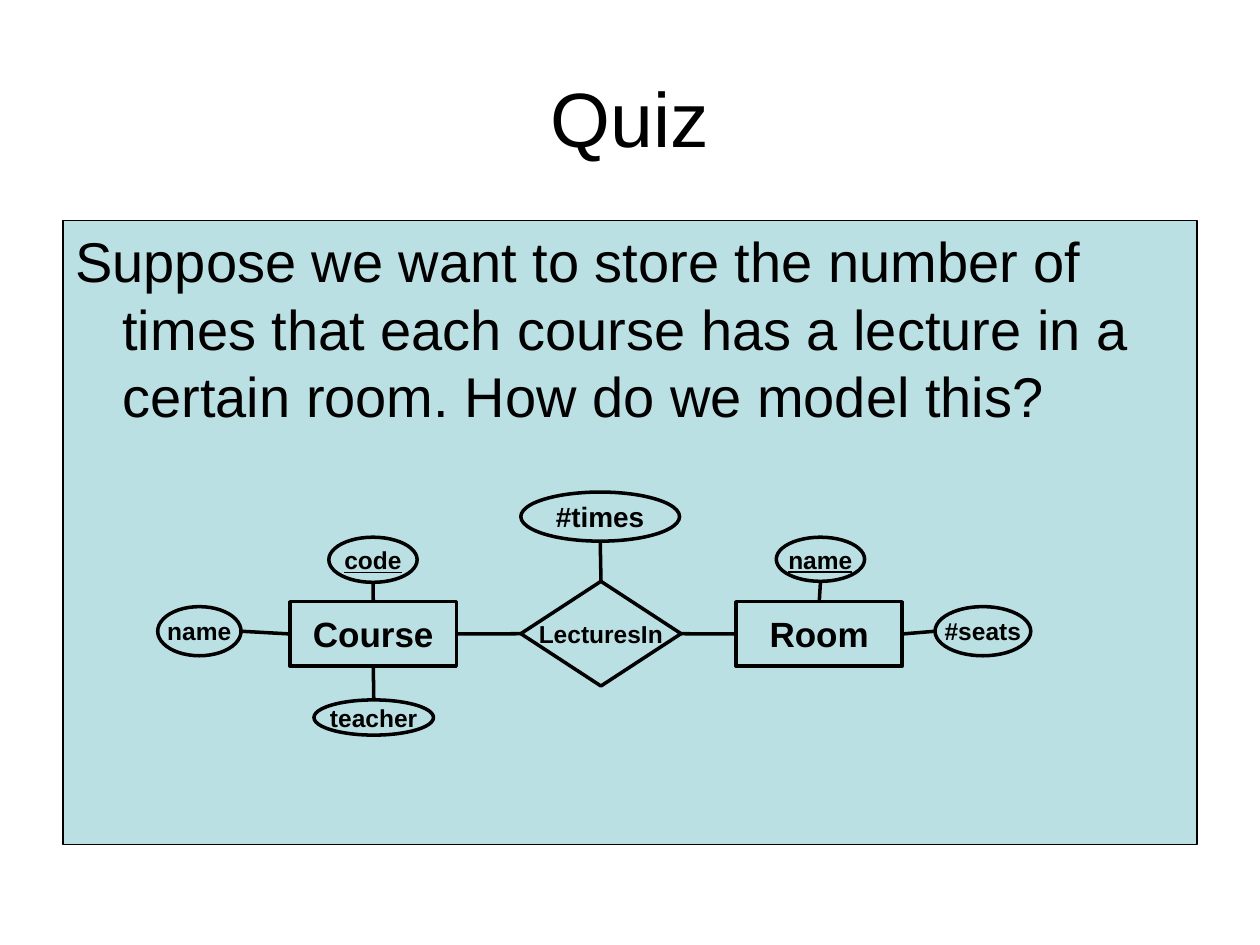
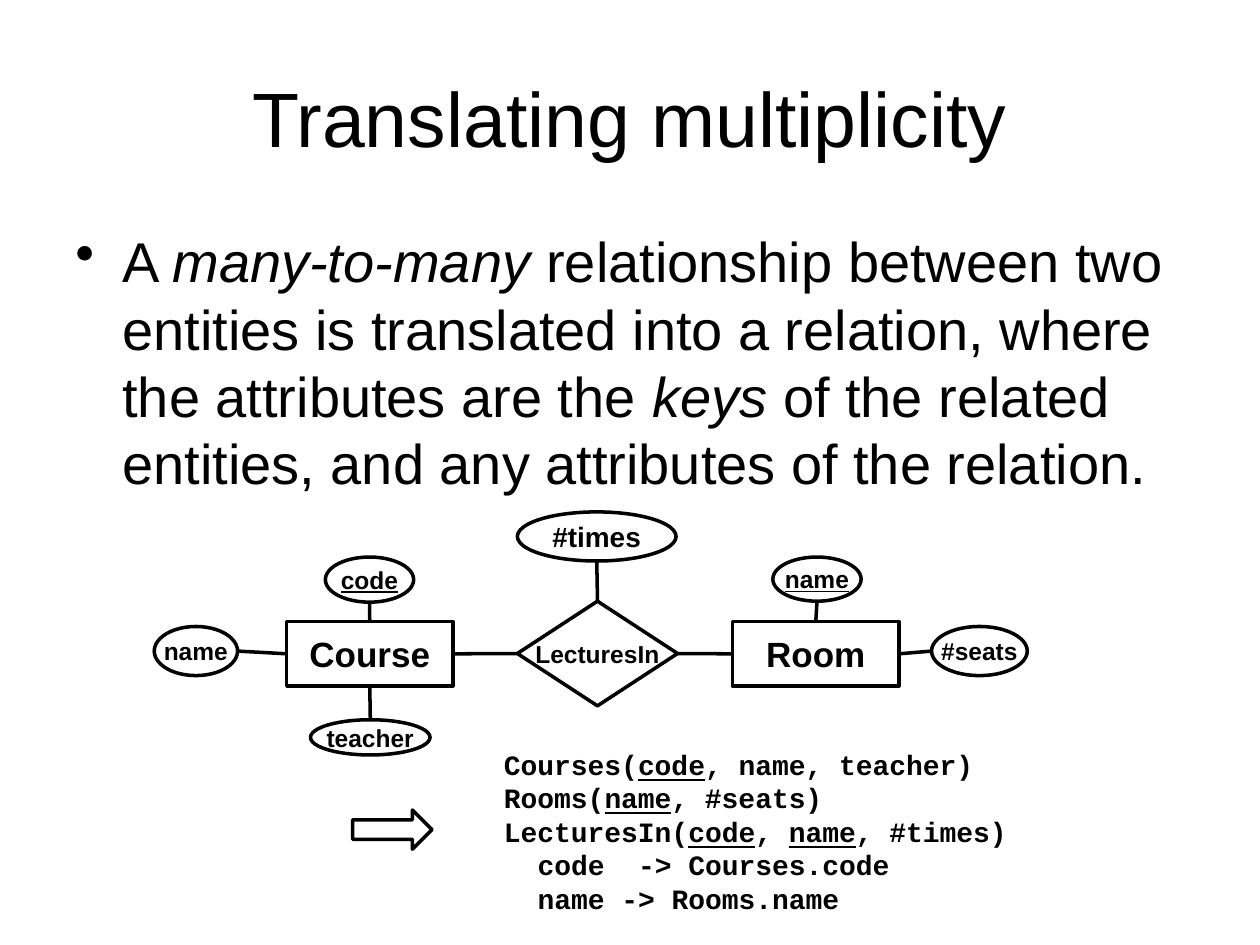
from lxml import etree
from pptx import Presentation
from pptx import util as u
from pptx.dml.color import RGBColor
from pptx.enum import shapes, text
from pptx.oxml import ns

COLORS = {"ink": "000000", "panel": "BBE0E3"}
SHAPE = shapes.MSO_SHAPE
ALIGN = text.PP_ALIGN
ANCHOR = text.MSO_ANCHOR
TOP, LEFT, BOTTOM, RIGHT = range(4)


def rgb(name):
    return RGBColor.from_string(COLORS[name])


def write(p, content, size=32, font="Arial", bold=False, align=ALIGN.LEFT,
          mark="italic", before=0, margin=0, hanging=0, bullet=None):
    """Fill a paragraph; parts between | signs get the mark format."""
    p.alignment = align
    for i, part in enumerate(content.split("|")):
        if not part:
            continue
        r = p.add_run()
        r.text = part
        f = r.font
        f.size, f.name, f.bold = u.Pt(size), font, bold
        f.color.rgb = rgb("ink")
        if i % 2:
            setattr(f, mark, True)
    pPr = p._p.get_or_add_pPr()
    pPr.set("marL", str(u.Cm(margin)))
    pPr.set("indent", str(u.Cm(-hanging)))
    if before:
        spacing = etree.SubElement(pPr, ns.qn("a:spcBef"))
        etree.SubElement(spacing, ns.qn("a:spcPct"), val=str(before * 1000))
    if bullet:
        etree.SubElement(pPr, ns.qn("a:buChar"), char=bullet)


class Deck:
    """Holds the style and the current slide."""

    line_width = u.Pt(2)
    body_format = dict(before=20, margin=0.95, hanging=0.95)

    def __init__(self):
        self.prs = Presentation()
        self.prs.slide_width, self.prs.slide_height = u.Cm(25.4), u.Cm(19.05)

    def slide(self, title):
        self.s = self.prs.slides.add_slide(self.prs.slide_layouts[6])
        self.shapes = self.s.shapes
        tf = self.textbox(1.27, 0.76, 22.86, 3.18)
        tf.vertical_anchor = ANCHOR.MIDDLE
        write(tf.paragraphs[0], title, size=44, align=ALIGN.CENTER)

    def group(self):
        self.shapes = self.s.shapes.add_group_shape().shapes

    def textbox(self, *box):
        tf = self.shapes.add_textbox(*map(u.Cm, box)).text_frame
        tf.word_wrap = True
        return tf

    def shape(self, kind, *box, fill=None, width=line_width):
        sp = self.shapes.add_shape(kind, *map(u.Cm, box))
        sp.shadow.inherit = False
        if fill:
            sp.fill.solid()
            sp.fill.fore_color.rgb = rgb(fill)
        else:
            sp.fill.background()
        sp.line.color.rgb = rgb("ink")
        sp.line.width = width
        return sp

    def node(self, kind, label, *box, size=14):
        sp = self.shape(kind, *box)
        tf = sp.text_frame
        tf.word_wrap = False
        tf.vertical_anchor = ANCHOR.MIDDLE
        write(tf.paragraphs[0], label, size=size, bold=True,
              align=ALIGN.CENTER, mark="underline")
        return sp

    def link(self, start, start_side, end, end_side):
        """Join the middles of two sides."""
        points = []
        for sp, side in ((start, start_side), (end, end_side)):
            across, down = {TOP: (1, 0), LEFT: (0, 1),
                            BOTTOM: (1, 2), RIGHT: (2, 1)}[side]
            points += [sp.left + sp.width * across // 2,
                       sp.top + sp.height * down // 2]
        line = self.shapes.add_connector(shapes.MSO_CONNECTOR.STRAIGHT, *points)
        line.line.color.rgb = rgb("ink")
        line.line.width = self.line_width
        etree.SubElement(line._element.spPr, ns.qn("a:effectLst"))
        # Ovals number their connection sites differently
        if start.auto_shape_type != SHAPE.OVAL:
            line.begin_connect(start, start_side)
        if end.auto_shape_type != SHAPE.OVAL:
            line.end_connect(end, end_side)

    def er_diagram(self, left, top):
        def node(kind, label, x, y, w, h, **fmt):
            return self.node(kind, label, left + x, top + y, w, h, **fmt)

        # Entities and their relationship
        course, room = [node(SHAPE.RECTANGLE, label, x, 2.21, 3.35, 1.3, size=20)
                        for label, x in (("Course", 2.67), ("Room", 11.66))]
        lectures = node(SHAPE.DIAMOND, "LecturesIn", 7.32, 1.8, 3.23, 2.11)
        self.link(course, RIGHT, lectures, LEFT)
        self.link(lectures, RIGHT, room, LEFT)

        # Attributes: label, box, size, owner, side of the owner
        attributes = [
            ("name", (0, 2.31, 1.68, 0.99), 14, course, LEFT),
            ("|code|", (3.45, 0.91, 1.78, 0.91), 14, course, TOP),
            ("teacher", (3.15, 4.19, 2.41, 0.71), 14, course, BOTTOM),
            ("|name|", (12.47, 0.91, 1.78, 0.89), 14, room, TOP),
            ("#seats", (15.67, 2.31, 1.93, 0.99), 14, room, RIGHT),
            ("#times", (7.32, 0, 3.2, 0.99), 16, lectures, TOP),
        ]
        opposite = {TOP: BOTTOM, BOTTOM: TOP, LEFT: RIGHT, RIGHT: LEFT}
        for label, box, size, owner, side in attributes:
            oval = node(SHAPE.OVAL, label, *box, size=size)
            self.link(oval, opposite[side], owner, side)


def quiz(deck):
    deck.slide("Quiz")
    panel = deck.shape(SHAPE.RECTANGLE, 1.27, 4.45, 22.86, 12.57,
                       fill="panel", width=u.Pt(0.75))
    tf = panel.text_frame
    tf.word_wrap = True
    tf.vertical_anchor = ANCHOR.TOP
    write(tf.paragraphs[0],
          "Suppose we want to store the number of times that each course has "
          "a lecture in a certain room. How do we model this?",
          **deck.body_format)
    deck.er_diagram(3.18, 9.92)


def translating(deck):
    deck.slide("Translating multiplicity")
    tf = deck.textbox(1.27, 4.45, 22.86, 5.87)
    write(tf.paragraphs[0],
          "A |many-to-many |relationship between two entities is translated "
          "into a relation, where the attributes are the |keys| of the related "
          "entities, and any attributes of the relation.",
          bullet="•", **deck.body_format)

    # Resulting relations
    deck.shape(SHAPE.RIGHT_ARROW, 7.11, 16.33, 1.6, 0.79)
    tf = deck.textbox(9.91, 14.94, 12.01, 3.66)
    tf.auto_size = text.MSO_AUTO_SIZE.SHAPE_TO_FIT_TEXT
    relations = [
        ("Courses(|code|, name, teacher)", dict(before=50)),
        ("Rooms(|name|, #seats)", {}),
        ("LecturesIn(|code|, |name|, #times)", {}),
        ("code  -> Courses.code", dict(margin=0.68)),
        ("name -> Rooms.name", dict(margin=0.68)),
    ]
    for i, (line, fmt) in enumerate(relations):
        p = tf.add_paragraph() if i else tf.paragraphs[0]
        write(p, line, size=16, font="Courier New", bold=True,
              mark="underline", **fmt)

    deck.group()
    deck.er_diagram(3.11, 10.32)


def main():
    deck = Deck()
    quiz(deck)
    translating(deck)
    deck.prs.save("out.pptx")


if __name__ == "__main__":
    main()
